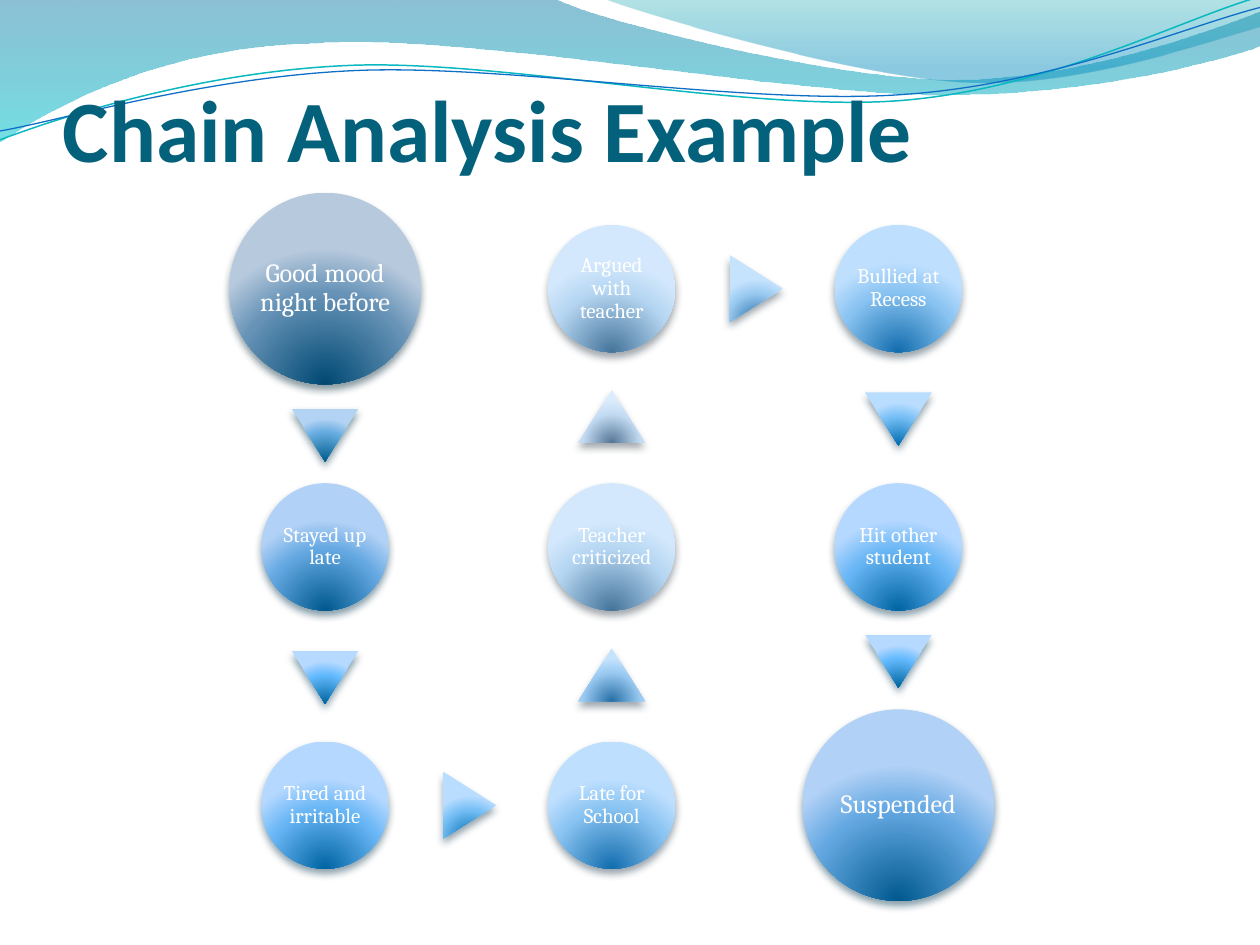
import dataclasses
import itertools
import math

import pptx
import pptx.dml.color
import pptx.enum.shapes
import pptx.enum.text
import pptx.oxml
import pptx.oxml.ns
import pptx.util

Inches = pptx.util.Inches
Pt = pptx.util.Pt
Kind = pptx.enum.shapes.MSO_SHAPE
Anchor = pptx.enum.text.MSO_ANCHOR


@dataclasses.dataclass(frozen=True)
class Theme:
    """Colours, fonts and sizes of the slide."""
    head: str = "Calibri"
    body: str = "Cambria"
    title: str = "04617B"
    text: str = "FFFFFF"
    title_pt: float = 50
    big_pt: float = 15
    small_pt: float = 12
    sea: tuple = ((0, "0074A1", 45), (100, "00C6CF", 55))
    sky: tuple = ((0, "00A1A9", 30), (80, "008BBF", 45))
    teal: str = "0AB8BF"
    blue: str = "0F6FC6"
    balls: tuple = (
        ("004973", "6793B7", "B6C9DD", "002938"),
        ("00598E", "64A8E2", "B1D1F6", "02344C"),
        ("0064A3", "6AB7F6", "B4D8FF", "103B54"),
        ("126DAE", "8AC4F2", "BEDFFE", "274052"),
        ("45749B", "B5D6F2", "D3E8FC", "3B4853"),
    )
    darts: tuple = (
        ("005C8C", "64ABDF", "B2D3F4", "003549"),
        ("00659F", "63BAFE", "B6DAFF", "053C57"),
        ("006DB2", "77C0F6", "B9DDFF", "1B3E54"),
        ("276FA6", "9BCBF2", "C6E3FE", "2F4453"),
        ("547696", "C4DCF3", "DBECFC", "414B54"),
    )


THEME = Theme()
RADIAL = ('<a:path path="circle"><a:fillToRect l="50000" t="130000" '
          'r="50000" b="-30000"/></a:path>')
LINEAR = '<a:lin ang="5400000" scaled="0"/>'

SEA = ((0, 0), (4.4, -0.01),
       (4.76, 0.17, 6.64, 0.63, 7.58, 0.63), (8.53, 0.63, 9.58, 0.26, 10, 0.09),
       (10.01, 0.36),
       (9.83, 0.44, 8.7, 0.76, 7.46, 0.75), (6.22, 0.75, 3.82, 0.28, 2.57, 0.34),
       (1.29, 0.36, 0.46, 0.83, -0.01, 1.13))
SKY = ((4.79, -0.01), (5.09, 0.11, 6.82, 0.62, 7.69, 0.65),
       (8.56, 0.69, 9.61, 0.32, 10, 0.21), (10, 0))
TEAL = ((0, 1.11), (0.48, 0.93, 1.58, 0.57, 2.77, 0.52),
        (3.95, 0.47, 5.93, 0.89, 7.13, 0.8), (8.33, 0.71, 9.38, 0.15, 9.98, -0.02))
BLUE = ((0, 1.04), (0.47, 0.96, 1.64, 0.61, 2.83, 0.56),
        (4.03, 0.51, 5.97, 0.84, 7.17, 0.75), (8.36, 0.67, 9.41, 0.21, 10, 0.06))

STEPS = (
    ("Good mood night before", 0, 0), ("Stayed up late", 0, 1),
    ("Tired and irritable", 0, 2), ("Late for School", 1, 2),
    ("Teacher criticized", 1, 1), ("Argued with teacher", 1, 0),
    ("Bullied at Recess", 2, 0), ("Hit other student", 2, 1),
    ("Suspended", 2, 2),
)
BALL_TONES = (0, 1, 2, 3, 4, 4, 3, 2, 1)
DART_TONES = (0, 1, 2, 3, 4, 3, 2, 1)


def rgb(code):
    """Turn a hex code into a colour."""
    return pptx.dml.color.RGBColor.from_string(code)


def node(text):
    """Build a drawing element from its markup."""
    space = pptx.oxml.ns.nsdecls("a")
    return pptx.oxml.parse_xml(text.replace(">", f" {space}>", 1))


def blend(shape, stops, shade):
    """Fill a shape with a gradient of (place, colour, opacity) stops."""
    marks = "".join(
        f'<a:gs pos="{at * 1000}"><a:srgbClr val="{code}">'
        f'<a:alpha val="{alpha * 1000}"/></a:srgbClr></a:gs>'
        for at, code, alpha in stops)
    shape.fill.background()
    props = shape.fill._xPr
    props.replace(props.find(pptx.oxml.ns.qn("a:noFill")),
                  node(f'<a:gradFill rotWithShape="1"><a:gsLst>{marks}</a:gsLst>'
                       f'{shade}</a:gradFill>'))


def glow(shape, tone):
    """Give a shape its radial shading and soft drop shadow."""
    *codes, dim = tone
    blend(shape, [(at, code, 100) for at, code in zip((0, 68, 100), codes)], RADIAL)
    shape.line.fill.background()
    shape.shadow.inherit = False
    cast = shape.fill._xPr.find(pptx.oxml.ns.qn("a:effectLst"))
    cast.append(node(
        f'<a:outerShdw blurRad="{Pt(4.5)}" dist="{Pt(3)}" dir="5400000" '
        f'rotWithShape="0"><a:srgbClr val="{dim}"><a:alpha val="48000"/>'
        '</a:srgbClr></a:outerShdw>'))


def spin(x, y, mid, turn):
    """Turn a point about a middle by degrees."""
    angle = math.radians(turn)
    dx, dy = x - mid[0], y - mid[1]
    return (mid[0] + dx * math.cos(angle) - dy * math.sin(angle),
            mid[1] + dx * math.sin(angle) + dy * math.cos(angle))


def curve(slide, box, data, close, turn=0):
    """Draw an outline of straight and cubic parts relative to a box."""
    left, top, width, height = box
    mid = (width / 2, height / 2)
    parts = []
    for part in data:
        spots = (spin(x, y, mid, -turn) for x, y in zip(part[::2], part[1::2]))
        parts.append([(Inches(left + x), Inches(top + y)) for x, y in spots])
    pen = slide.shapes.build_freeform(*parts[0][0])
    pen.add_line_segments([part[-1] for part in parts[1:]], close=close)
    shape = pen.convert_to_shape()
    legs = list(shape.fill._xPr.iter(pptx.oxml.ns.qn("a:lnTo")))
    for leg, part in zip(legs, parts[1:]):
        if len(part) == 3:
            marks = "".join(f'<a:pt x="{x - shape.left}" y="{y - shape.top}"/>'
                            for x, y in part)
            leg.getparent().replace(
                leg, node(f"<a:cubicBezTo>{marks}</a:cubicBezTo>"))
    shape.rotation = turn
    shape.shadow.inherit = False
    return shape


def waves(slide, box):
    """Draw the two bands and two lines along the top."""
    for data, stops in ((SEA, THEME.sea), (SKY, THEME.sky)):
        band = curve(slide, box, data, True)
        blend(band, stops, LINEAR)
        band.line.fill.background()
    for data, code, width in ((TEAL, THEME.teal, 0.85), (BLUE, THEME.blue, 0.75)):
        wire = curve(slide, box, data, False, -2.7)
        wire.fill.background()
        wire.line.color.rgb = rgb(code)
        wire.line.width = Pt(width)


def write(shape, text, font, size, code, anchor, inset):
    """Put one paragraph in a shape and return it."""
    frame = shape.text_frame
    frame.word_wrap = True
    frame.vertical_anchor = anchor
    frame.margin_left, frame.margin_top, frame.margin_right, frame.margin_bottom = (
        Inches(gap) for gap in inset)
    para = frame.paragraphs[0]
    para.text = text
    para.font.name, para.font.size = font, Pt(size)
    para.font.color.rgb = rgb(code)
    return para


def title(slide, box):
    """Place the heading at the foot of its box."""
    label = slide.shapes.add_textbox(*map(Inches, box))
    para = write(label, "Chain Analysis Example", THEME.head, THEME.title_pt,
                 THEME.title, Anchor.BOTTOM, (0, 0.05, 0, 0))
    para.font.bold = True


def ball(slide, text, x, y, size, points, tone):
    """Draw one labelled circle about a centre."""
    shape = slide.shapes.add_shape(Kind.OVAL, Inches(x - size / 2),
                                   Inches(y - size / 2), Inches(size), Inches(size))
    glow(shape, tone)
    para = write(shape, text, THEME.body, points, THEME.text, Anchor.MIDDLE,
                 (0.02,) * 4)
    para.alignment = pptx.enum.text.PP_ALIGN.CENTER
    para.line_spacing = 0.9


def dart(slide, start, end, tone):
    """Draw a triangle midway between two circles, pointing to the second."""
    (x1, y1, size1), (x2, y2, size2) = start, end
    turn = math.atan2(y2 - y1, x2 - x1)
    shift = (size1 - size2) / 4 + 0.01
    x = (x1 + x2) / 2 + shift * math.cos(turn)
    y = (y1 + y2) / 2 + shift * math.sin(turn)
    wide, high = 0.53, 0.42
    shape = slide.shapes.add_shape(Kind.ISOSCELES_TRIANGLE, Inches(x - wide / 2),
                                   Inches(y - high / 2), Inches(wide), Inches(high))
    shape.rotation = math.degrees(turn) + 90
    glow(shape, tone)


def chain(slide, box):
    """Lay the steps out on a winding three by three grid."""
    left, top, width, height = box
    big, small = 1.52, 1.01
    spots = []
    for i, (text, col, row) in enumerate(STEPS):
        ends = i in (0, len(STEPS) - 1)
        spot = (left + big / 2 + col * (width - big) / 2,
                top + big / 2 + row * (height - big) / 2, big if ends else small)
        spots.append(spot)
        ball(slide, text, *spot, THEME.big_pt if ends else THEME.small_pt,
             THEME.balls[BALL_TONES[i]])
    for (start, end), tone in zip(itertools.pairwise(spots), DART_TONES):
        dart(slide, start, end, THEME.darts[tone])


def main():
    """Build and save the slide."""
    deck = pptx.Presentation()
    deck.slide_width, deck.slide_height = Inches(10), Inches(7.5)
    slide = deck.slides.add_slide(deck.slide_layouts[6])
    waves(slide, (0, 0, 10, 1.14))
    title(slide, (0.5, 0.18, 9, 1.25))
    chain(slide, (1.82, 1.53, 6.07, 5.62))
    deck.save("out.pptx")


if __name__ == "__main__":
    main()
